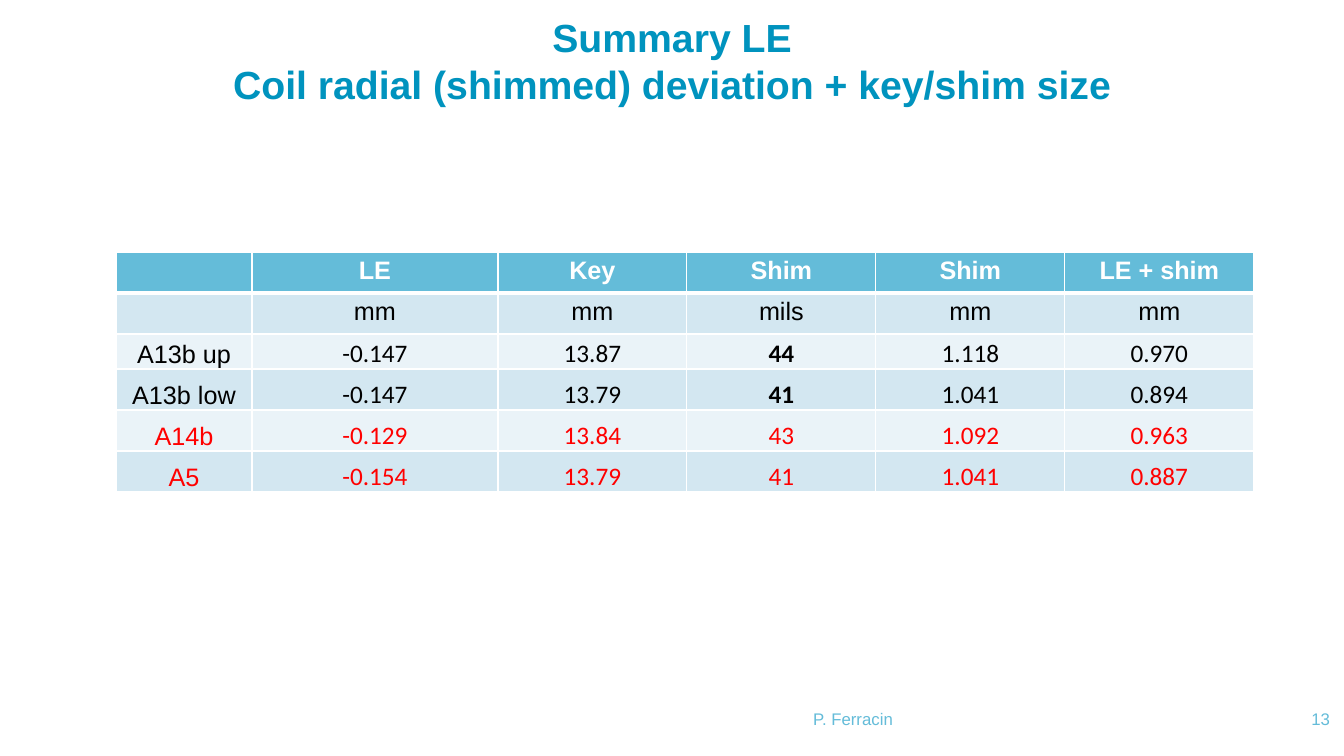
import pptx
import pptx.dml.color
import pptx.enum.text
import pptx.oxml
import pptx.oxml.ns
import pptx.util

ALIGN = pptx.enum.text.PP_ALIGN
ANCHOR = pptx.enum.text.MSO_ANCHOR

COLORS = {
    "title": "0093BE", "accent": "64BCD9", "dark band": "D3E7F1",
    "light band": "EAF3F8", "white": "FFFFFF", "black": "000000",
    "red": "FF0000",
}
TITLE = ["Summary LE", "Coil radial (shimmed) deviation + key/shim size"]
FOOTER = "P. Ferracin"
PAGE_NUMBER = "13"
HEADINGS = ["", "LE", "Key", "Shim", "Shim", "LE + shim"]
UNITS = ["", "mm", "mm", "mils", "mm", "mm"]
COILS = [
    ("A13b up", "-0.147", "13.87", "44", "1.118", "0.970"),
    ("A13b low", "-0.147", "13.79", "41", "1.041", "0.894"),
    ("A14b", "-0.129", "13.84", "43", "1.092", "0.963"),
    ("A5", "-0.154", "13.79", "41", "1.041", "0.887"),
]
RED_COILS = {"A14b", "A5"}
MILS_COLUMN = 3
COLUMN_WIDTHS = [136, 246] + [189] * 4
ROW_HEIGHTS = [41, 41, 35, 41, 41, 41]


def px(length):
    return round(length * 914400 / 100.8)


def rgb(name):
    return pptx.dml.color.RGBColor.from_string(COLORS[name])


def add_span(para, text, size, color, bold=False, font="Arial"):
    span = para.add_run()
    span.text = text
    span.font.name = font
    span.font.size = pptx.util.Pt(size)
    span.font.bold = bold
    span.font.color.rgb = rgb(color)


def add_text(page, place, lines, size, color, align, anchor, bold=False):
    """Add a text box without insets whose lines share one paragraph."""
    frame = page.shapes.add_textbox(*map(px, place)).text_frame
    frame.word_wrap = True
    frame.vertical_anchor = anchor
    frame.margin_left = frame.margin_right = 0
    frame.margin_top = frame.margin_bottom = 0
    para = frame.paragraphs[0]
    para.alignment = align
    for index, line in enumerate(lines):
        if index:
            para.add_line_break()
        add_span(para, line, size, color, bold)


def add_borders(cell, widths):
    """Draw white borders; widths maps each side (L, R, T, B) to points."""
    properties = cell._tc.get_or_add_tcPr()
    for side, width in widths.items():
        properties.append(pptx.oxml.parse_xml(
            f'<a:ln{side} {pptx.oxml.ns.nsdecls("a")} w="{pptx.util.Pt(width)}">'
            f'<a:solidFill><a:srgbClr val="{COLORS["white"]}"/></a:solidFill>'
            f'</a:ln{side}>'))


def fill_cell(cell, text, row, column, coil):
    is_heading, is_coil = row == 0, row > 1
    add_borders(cell, {"L": 1, "R": 1, "T": 3 if row == 1 else 1,
                       "B": 3 if is_heading else 1})
    band = "dark band" if row % 2 else "light band"
    cell.fill.solid()
    cell.fill.fore_color.rgb = rgb("accent" if is_heading else band)
    if is_coil:
        cell.vertical_anchor = ANCHOR.BOTTOM
        cell.margin_left = cell.margin_right = cell.margin_top = px(1)
        cell.margin_bottom = 0
    para = cell.text_frame.paragraphs[0]
    para.alignment = ALIGN.CENTER
    if text:
        is_red = coil in RED_COILS
        color = "white" if is_heading else "red" if is_red else "black"
        bold = is_heading or (is_coil and column == MILS_COLUMN and not is_red)
        font = "Calibri" if is_coil and column else "Arial"
        add_span(para, text, 18, color, bold, font)


def add_coil_table(page):
    rows = [HEADINGS, UNITS, *COILS]
    table = page.shapes.add_table(
        len(rows), len(HEADINGS), px(116), px(252),
        px(sum(COLUMN_WIDTHS)), px(sum(ROW_HEIGHTS))).table
    for column, width in zip(table.columns, COLUMN_WIDTHS):
        column.width = px(width)
    for row, height in zip(table.rows, ROW_HEIGHTS):
        row.height = px(height)
    for row, texts in enumerate(rows):
        for column, text in enumerate(texts):
            fill_cell(table.cell(row, column), text, row, column, texts[0])


def main():
    deck = pptx.Presentation()
    deck.slide_width, deck.slide_height = px(1344), px(756)
    page = deck.slides.add_slide(deck.slide_layouts[6])
    add_text(page, (90, 20, 1164, 80), TITLE, 28, "title",
             ALIGN.CENTER, ANCHOR.MIDDLE, bold=True)
    add_text(page, (452, 690, 802, 39), [FOOTER], 12, "accent",
             ALIGN.CENTER, ANCHOR.BOTTOM)
    add_text(page, (1277, 690, 53, 39), [PAGE_NUMBER], 12, "accent",
             ALIGN.RIGHT, ANCHOR.BOTTOM)
    add_coil_table(page)
    deck.save("out.pptx")


if __name__ == "__main__":
    main()
